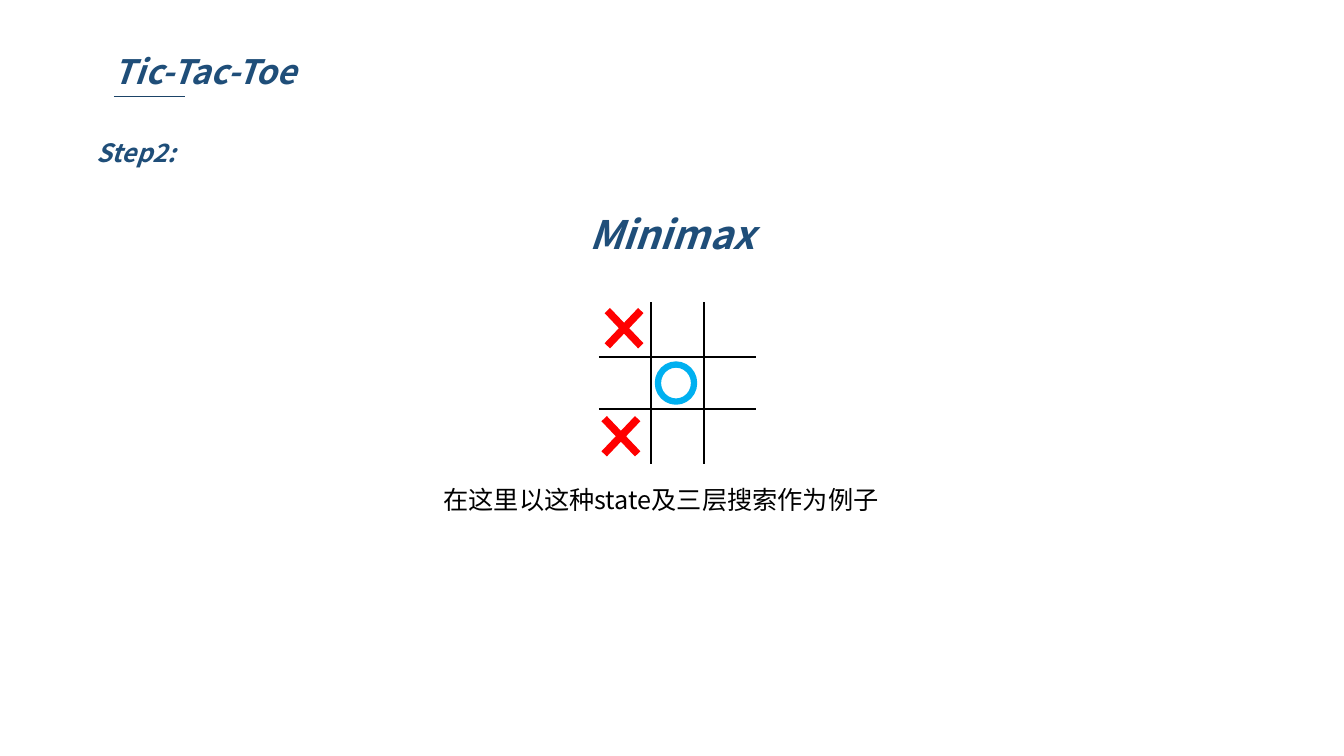
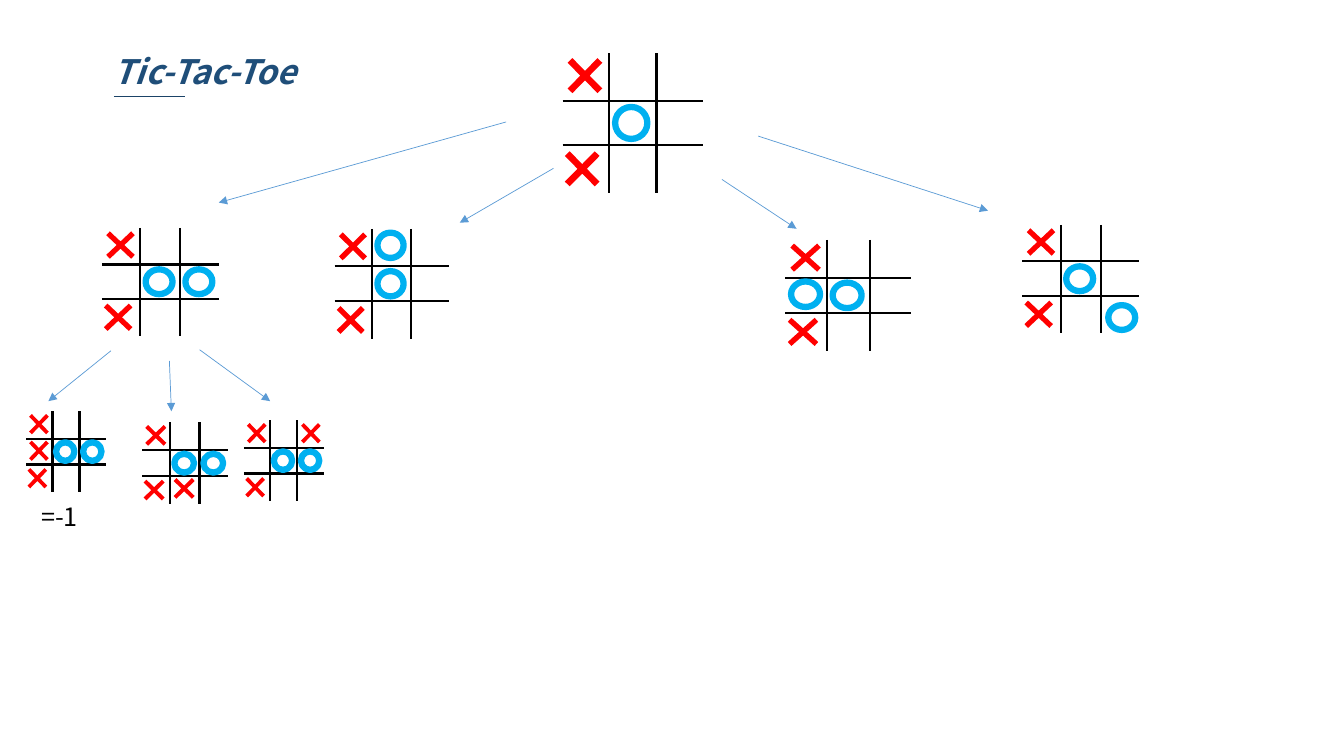
import pptx
import pptx.util
import pptx.dml.color
import pptx.enum.shapes
import pptx.enum.text
import pptx.oxml.ns
from lxml import etree

RGBColor = pptx.dml.color.RGBColor
Shapes = pptx.enum.shapes.MSO_SHAPE
Align = pptx.enum.text.PP_ALIGN
Anchor = pptx.enum.text.MSO_ANCHOR
qn = pptx.oxml.ns.qn

NAVY = RGBColor(0x1F, 0x4E, 0x79)
RULE_BLUE = RGBColor(0x1B, 0x43, 0x67)
ARROW_BLUE = RGBColor(0x5B, 0x9B, 0xD5)
CIRCLE_BLUE = RGBColor(0x00, 0xB0, 0xF0)
RED = RGBColor(0xFF, 0x00, 0x00)
BLACK = RGBColor(0x00, 0x00, 0x00)
WHITE = RGBColor(0xFF, 0xFF, 0xFF)

FONT = "Noto Sans CJK SC"
EMU_PER_PX = 9144
TITLE_ONLY, TITLE_AND_BODY = 5, 1

ROW_LINES = (0.34, 0.66)
COLUMN_LINES = (0.33, 0.67)
CROSS_SIZE = (0.41, 0.42)
CIRCLE_SIZE = (0.23, 0.23)
CELL_CENTRES = (
    ((0.16, 0.16), (0.49, 0.15), (0.84, 0.16)),
    ((0.16, 0.49), (0.49, 0.5), (0.83, 0.5)),
    ((0.14, 0.83), (0.49, 0.81), (0.85, 0.86)),
)

START_STATE = "X.. .O. X.."
CIRCLE_MOVES = (
    ((101, 226, 116, 107), "X.. .OO X.."),
    ((332, 227, 113, 109), "XO. .O. X.."),
    ((779, 238, 125, 110), "X.. OO. X.."),
    ((1014, 223, 116, 107), "X.. .O. X.O"),
)
CROSS_MOVES = (
    ((26, 408, 79, 80), "X.. XOO X.."),
    ((141, 419, 85, 81), "X.. .OO XX."),
    ((242, 417, 79, 80), "X.X .OO X.."),
)
ARROWS = (
    (502, 121, 217, 201),
    (549, 167, 456, 221),
    (716, 178, 790, 227),
    (752, 135, 980, 209),
    (110, 348, 48, 398),
    (168, 358, 170, 408),
    (198, 347, 268, 398),
)


def px(length):
    return pptx.util.Emu(round(length * EMU_PER_PX))


def write_text(paragraph, text, size=18, color=BLACK, strong=False,
               align=Align.LEFT, before=0, line_height=None):
    properties = paragraph._p.get_or_add_pPr()
    properties.set("marL", "0")
    properties.set("indent", "0")
    etree.SubElement(properties, qn("a:buNone"))
    paragraph.alignment = align
    paragraph.space_before = pptx.util.Pt(before)
    if line_height:
        paragraph.line_spacing = pptx.util.Pt(line_height)
    run = paragraph.add_run()
    run.text = text
    run.font.name = FONT
    run.font.size = pptx.util.Pt(size)
    run.font.bold = run.font.italic = strong
    run.font.color.rgb = color
    east_asian = etree.SubElement(run.font._element, qn("a:ea"))
    east_asian.set("typeface", FONT)


class Deck:
    def __init__(self):
        self.presentation = pptx.Presentation()
        self.presentation.slide_width = px(1333)
        self.presentation.slide_height = px(750)
        self.slide = None

    def add_slide(self, layout, title):
        layouts = self.presentation.slide_layouts
        self.slide = self.presentation.slides.add_slide(layouts[layout])
        frame = self.frame(self.slide.shapes.title, 103, 45, 461, 50)
        write_text(frame.paragraphs[0], title, size=24, color=NAVY, strong=True)
        self.line(self.slide.shapes, 113, 96, 183, 96, RULE_BLUE, 0.75)

    def frame(self, shape, left, top, width, height, anchor=Anchor.MIDDLE, margin=0):
        shape.left, shape.top = px(left), px(top)
        shape.width, shape.height = px(width), px(height)
        frame = shape.text_frame
        frame.word_wrap = True
        frame.auto_size = pptx.enum.text.MSO_AUTO_SIZE.NONE
        frame.vertical_anchor = anchor
        frame.margin_left = frame.margin_right = px(10)
        frame.margin_top = frame.margin_bottom = px(margin)
        return frame

    def body(self, heading, topic):
        frame = self.frame(self.slide.placeholders[1], 86, 131, 1161, 128,
                           anchor=Anchor.TOP, margin=5)
        write_text(frame.paragraphs[0], heading, color=NAVY, strong=True,
                   line_height=22)
        write_text(frame.add_paragraph(), topic, size=28, color=NAVY, strong=True,
                   align=Align.CENTER, before=30, line_height=34)

    def caption(self, text, left, top, width, height):
        box = self.slide.shapes.add_textbox(0, 0, px(width), px(height))
        frame = self.frame(box, left, top, width, height)
        write_text(frame.paragraphs[0], text)

    def line(self, shapes, x1, y1, x2, y2, color, weight):
        connector = shapes.add_connector(
            pptx.enum.shapes.MSO_CONNECTOR.STRAIGHT, px(x1), px(y1), px(x2), px(y2))
        connector.line.color.rgb = color
        connector.line.width = pptx.util.Pt(weight)
        etree.SubElement(connector._element.spPr, qn("a:effectLst"))
        return connector

    def arrow(self, x1, y1, x2, y2):
        connector = self.line(self.slide.shapes, x1, y1, x2, y2, ARROW_BLUE, 0.5)
        outline = connector._element.spPr.find(qn("a:ln"))
        etree.SubElement(outline, qn("a:tailEnd")).set("type", "triangle")

    def mark(self, shapes, symbol, x, y, board_width, board_height):
        is_cross = symbol == "X"
        across, down = CROSS_SIZE if is_cross else CIRCLE_SIZE
        width, height = across * board_width, down * board_height
        shape = shapes.add_shape(
            Shapes.MATH_MULTIPLY if is_cross else Shapes.OVAL,
            px(x - width / 2), px(y - height / 2), px(width), px(height))
        shape.shadow.inherit = False
        shape.fill.solid()
        shape.fill.fore_color.rgb = RED if is_cross else WHITE
        if is_cross:
            shape.adjustments[0] = 0.116
            shape.line.fill.background()
        else:
            shape.line.color.rgb = CIRCLE_BLUE
            shape.line.width = pptx.util.Pt(4.5)

    def board(self, left, top, width, height, state):
        shapes = self.slide.shapes.add_group_shape().shapes
        for fraction in ROW_LINES:
            y = top + fraction * height
            self.line(shapes, left, y, left + width, y, BLACK, 1.5)
        for fraction in COLUMN_LINES:
            x = left + fraction * width
            self.line(shapes, x, top, x, top + height, BLACK, 1.5)
        for symbols, centres in zip(state.split(), CELL_CENTRES):
            for symbol, (across, down) in zip(symbols, centres):
                if symbol != ".":
                    self.mark(shapes, symbol, left + across * width,
                              top + down * height, width, height)


def main():
    deck = Deck()

    deck.add_slide(TITLE_AND_BODY, "Tic-Tac-Toe")
    deck.body("Step2:", "Minimax")
    deck.board(594, 300, 156, 160, START_STATE)
    deck.caption("在这里以这种state及三层搜索作为例子", 430, 475, 705, 40)

    deck.add_slide(TITLE_ONLY, "Tic-Tac-Toe")
    deck.board(558, 53, 139, 138, START_STATE)
    for box, state in CIRCLE_MOVES + CROSS_MOVES:
        deck.board(*box, state)
    for ends in ARROWS:
        deck.arrow(*ends)
    deck.caption("=-1", 31, 492, 74, 40)

    deck.presentation.save("out.pptx")


if __name__ == "__main__":
    main()
